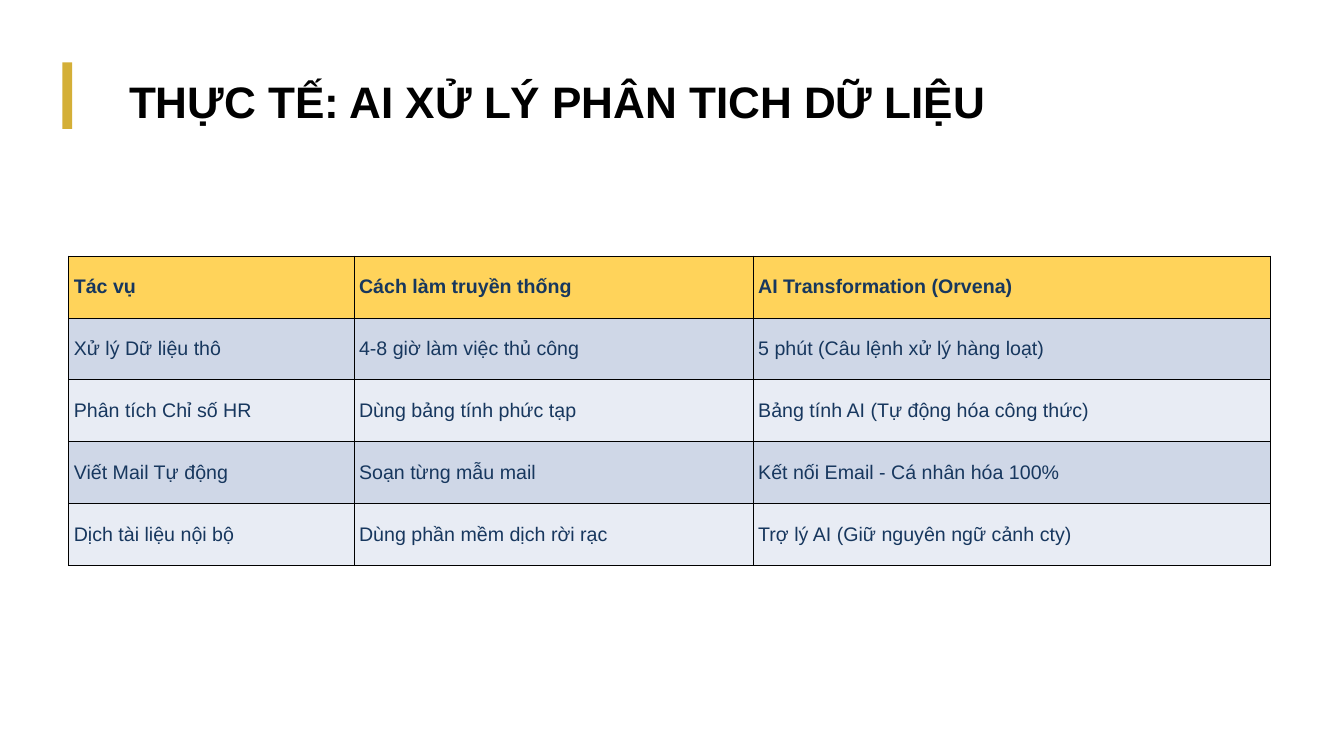
from lxml import etree
from pptx import Presentation
from pptx.dml.color import RGBColor
from pptx.enum.shapes import MSO_SHAPE
from pptx.enum.text import MSO_ANCHOR, MSO_AUTO_SIZE, PP_ALIGN
from pptx.oxml.ns import qn
from pptx.util import Cm, Pt

RECT = MSO_SHAPE.RECTANGLE
MIDDLE = MSO_ANCHOR.MIDDLE
GROW = MSO_AUTO_SIZE.SHAPE_TO_FIT_TEXT
LEFT = PP_ALIGN.LEFT
FONT = "Arial"
COLORS = {
    "accent": "D4AF37",
    "title": "000000",
    "text": "17375E",
    "header": "FFD35A",
    "odd": "CFD7E7",
    "even": "E8ECF4",
    "border": "000000",
}
TITLE = "THỰC TẾ: AI XỬ LÝ PHÂN TICH DỮ LIỆU"
COLUMN_SHARES = (2.83, 3.96, 5.13)
ROWS = [
    ("Tác vụ", "Cách làm truyền thống", "AI Transformation (Orvena)"),
    ("Xử lý Dữ liệu thô", "4-8 giờ làm việc thủ công", "5 phút (Câu lệnh xử lý hàng loạt)"),
    ("Phân tích Chỉ số HR", "Dùng bảng tính phức tạp", "Bảng tính AI (Tự động hóa công thức)"),
    ("Viết Mail Tự động", "Soạn từng mẫu mail", "Kết nối Email - Cá nhân hóa 100%"),
    ("Dịch tài liệu nội bộ", "Dùng phần mềm dịch rời rạc", "Trợ lý AI (Giữ nguyên ngữ cảnh cty)"),
]


def color(name):
    """Return the named palette colour."""
    return RGBColor.from_string(COLORS[name])


def style_paragraph(p, size, color_name, bold):
    """Set the font and left alignment of a paragraph."""
    p.alignment = LEFT
    p.font.name = FONT
    p.font.size = Pt(size)
    p.font.bold = bold
    p.font.color.rgb = color(color_name)


def add_heading(s, x, y, w, h):
    """Place the accent bar and the title in the given box."""
    bar = s.shapes.add_shape(RECT, Cm(x), Cm(y), Cm(0.25), Cm(h))
    bar.shadow.inherit = False
    bar.fill.solid()
    bar.fill.fore_color.rgb = color("accent")
    bar.line.fill.background()

    title = s.shapes.title
    title.left, title.top = Cm(x + 1.43), Cm(y + 0.16)
    title.width, title.height = Cm(w - 1.43), Cm(1.6)
    tf = title.text_frame
    tf.text = TITLE
    tf.word_wrap = True
    tf.auto_size = GROW
    tf.vertical_anchor = MIDDLE
    style_paragraph(tf.paragraphs[0], 31.5, "title", True)


def add_borders(cell):
    """Draw a thin line on every side of a cell."""
    tc_pr = cell._tc.get_or_add_tcPr()
    for side in ("lnL", "lnR", "lnT", "lnB"):
        ln = etree.SubElement(tc_pr, qn(f"a:{side}"), w=str(Pt(0.6)))
        fill = etree.SubElement(ln, qn("a:solidFill"))
        etree.SubElement(fill, qn("a:srgbClr"), val=COLORS["border"])


def add_comparison(s, x, y, w, h):
    """Place the comparison table in the given box."""
    frame = s.shapes.add_table(len(ROWS), len(COLUMN_SHARES), Cm(x), Cm(y), Cm(w), Cm(h))
    table = frame.table
    for column, share in zip(table.columns, COLUMN_SHARES):
        column.width = Cm(w * share / sum(COLUMN_SHARES))
    for i, texts in enumerate(ROWS):
        table.rows[i].height = Cm(h / len(ROWS))
        fill_name = "header" if i == 0 else "odd" if i % 2 else "even"
        for j, text in enumerate(texts):
            cell = table.cell(i, j)
            cell.text = text
            cell.vertical_anchor = MIDDLE
            cell.margin_left = cell.margin_right = Cm(0.13)
            cell.margin_top = cell.margin_bottom = Cm(0.05)
            add_borders(cell)
            cell.fill.solid()
            cell.fill.fore_color.rgb = color(fill_name)
            style_paragraph(cell.text_frame.paragraphs[0], 14, "text", i == 0)


def main():
    """Build and save the slide."""
    prs = Presentation()
    prs.slide_width, prs.slide_height = Cm(33.87), Cm(19.05)
    s = prs.slides.add_slide(prs.slide_layouts[5])
    add_heading(s, 1.57, 1.57, 26.42, 1.68)
    add_comparison(s, 1.73, 6.45, 30.28, 7.8)
    prs.save("out.pptx")


if __name__ == "__main__":
    main()
